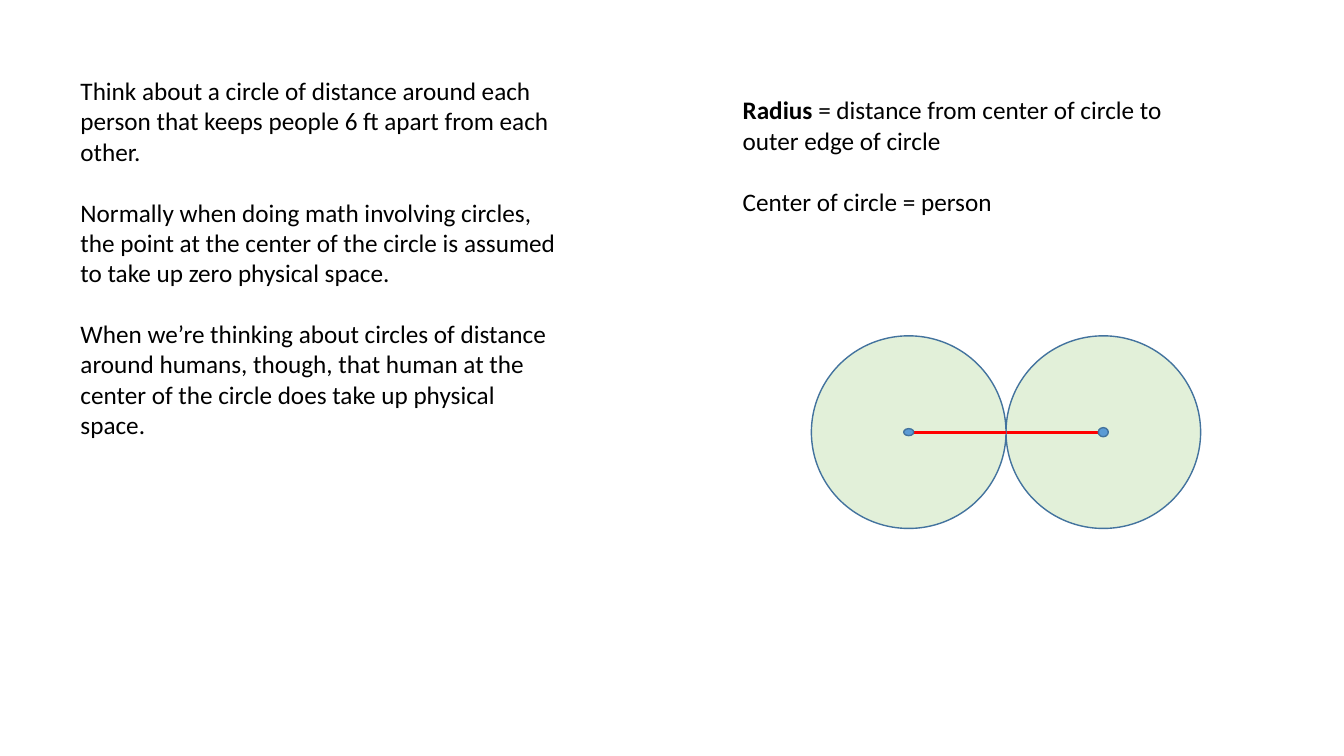
from lxml import etree
from pptx import Presentation
from pptx.dml.color import RGBColor
from pptx.enum.shapes import MSO_CONNECTOR, MSO_SHAPE
from pptx.oxml.ns import qn
from pptx.util import Pt

OVAL = MSO_SHAPE.OVAL
STRAIGHT = MSO_CONNECTOR.STRAIGHT

COLORS = {
    "text": "000000",
    "circle": "E2F0D9",
    "person": "5B9BD5",
    "outline": "43739E",
    "radius": "FF0000",
}
FONT = "Calibri"
TEXT_SIZE = 18
PARAGRAPH_GAP = 22

TOUCH_X, CENTER_Y = 718.6, 308.7
CIRCLE_WIDTH, CIRCLE_HEIGHT = 139, 137.6
PERSON_WIDTH = 7.2

EXPLANATION = [
    [("Think about a circle of distance around each person that keeps "
      "people 6 ft apart from each other.", False)],
    [("Normally when doing math involving circles, the point at the center "
      "of the circle is assumed to take up zero physical space.", False)],
    [("When we’re thinking about circles of distance around humans, though, "
      "that human at the center of the circle does take up physical space.", False)],
]
DEFINITIONS = [
    [("Radius", True),
     (" = distance from center of circle to outer edge of circle", False)],
    [("Center of circle = person", False)],
]


def rgb(name):
    return RGBColor.from_string(COLORS[name])


def add_text(page, left, top, width, height, paragraphs):
    """Add a text box; each paragraph is a list of (text, bold) spans."""
    box = page.shapes.add_textbox(Pt(left), Pt(top), Pt(width), Pt(height))
    frame = box.text_frame
    frame.word_wrap = True
    for index, spans in enumerate(paragraphs):
        para = frame.add_paragraph() if index else frame.paragraphs[0]
        para.font.name = FONT
        para.font.size = Pt(TEXT_SIZE)
        para.font.color.rgb = rgb("text")
        if index:
            para.space_before = Pt(PARAGRAPH_GAP)
        for text, bold in spans:
            span = para.add_run()
            span.text = text
            if bold:
                span.font.bold = True


def add_oval(page, center_x, width, height, fill):
    """Add an outlined oval centered on the line between the two people."""
    oval = page.shapes.add_shape(
        OVAL, Pt(center_x - width / 2), Pt(CENTER_Y - height / 2),
        Pt(width), Pt(height))
    oval.shadow.inherit = False
    oval.fill.solid()
    oval.fill.fore_color.rgb = rgb(fill)
    oval.line.color.rgb = rgb("outline")
    oval.line.width = Pt(1)


def add_radius(page, start_x, end_x):
    radius = page.shapes.add_connector(
        STRAIGHT, Pt(start_x), Pt(CENTER_Y), Pt(end_x), Pt(CENTER_Y))
    radius.line.color.rgb = rgb("radius")
    radius.line.width = Pt(2.25)
    etree.SubElement(radius._element.spPr, qn("a:effectLst"))


def add_distance_circle(page, side, person_height):
    """Add a circle, its radius and its person; side is -1 left or 1 right."""
    center_x = TOUCH_X + side * CIRCLE_WIDTH / 2
    add_oval(page, center_x, CIRCLE_WIDTH, CIRCLE_HEIGHT, "circle")
    add_radius(page, center_x - side * PERSON_WIDTH / 2, TOUCH_X)
    add_oval(page, center_x, PERSON_WIDTH, person_height, "person")


def main():
    deck = Presentation()
    deck.slide_width, deck.slide_height = Pt(960), Pt(540)
    page = deck.slides.add_slide(deck.slide_layouts[6])
    add_text(page, 50.4, 50.4, 354.3, 312.5, EXPLANATION)
    add_text(page, 523.4, 64.1, 315.4, 116.6, DEFINITIONS)
    add_distance_circle(page, 1, 6.5)
    add_distance_circle(page, -1, 5)
    deck.save("out.pptx")


if __name__ == "__main__":
    main()
